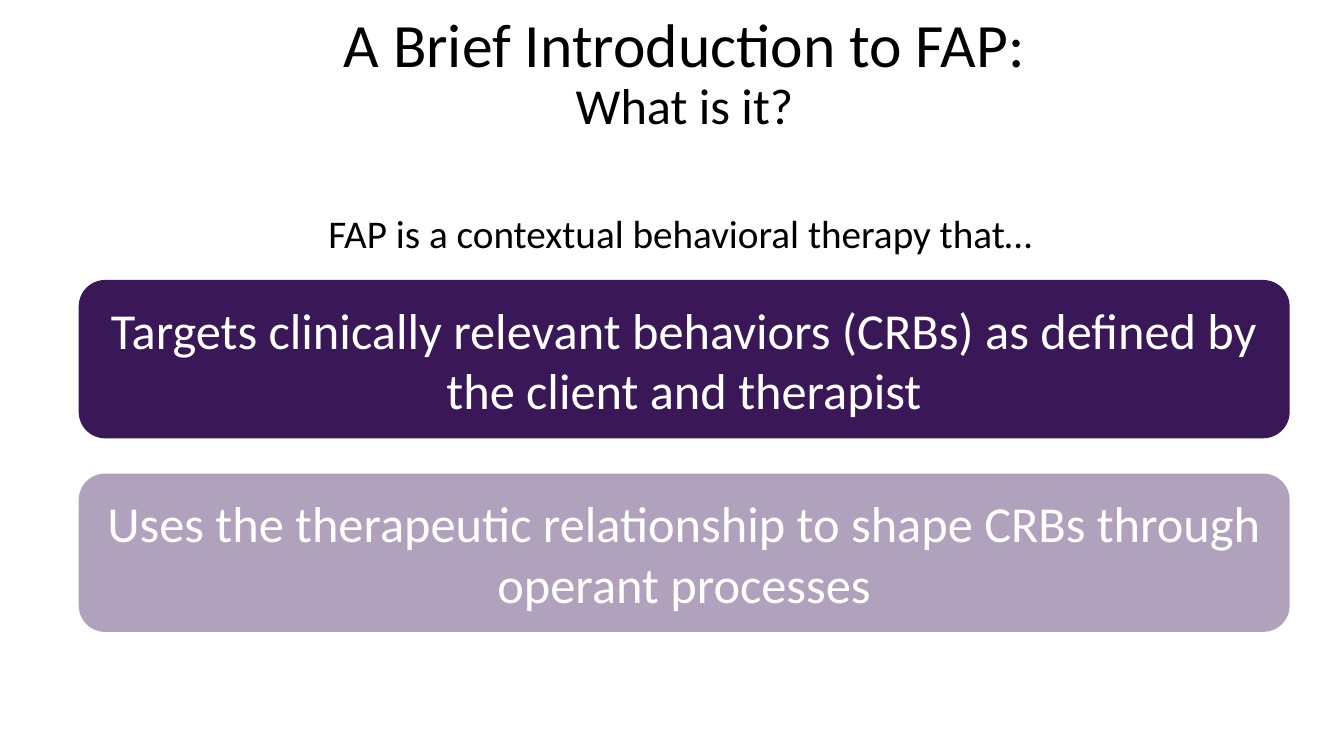
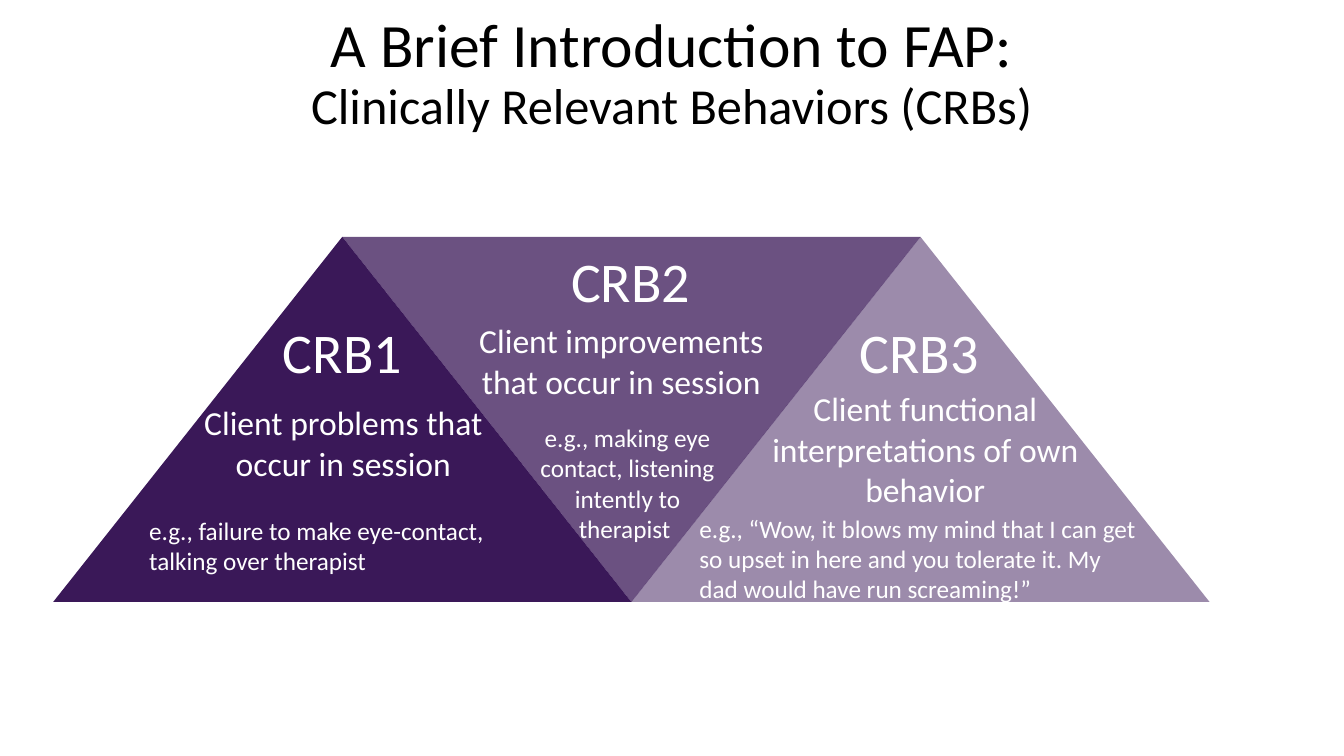
from lxml.etree import SubElement
from pptx import Presentation
from pptx.dml.color import RGBColor
from pptx.enum.shapes import MSO_SHAPE
from pptx.enum.text import MSO_ANCHOR, PP_ALIGN
from pptx.oxml.ns import qn
from pptx.util import Pt

FONT = "Calibri"
PURPLE, WHITE, BLACK = "3A1858", "FFFFFF", "000000"
LEFT, CENTER = PP_ALIGN.LEFT, PP_ALIGN.CENTER


def color(hex_string):
    return RGBColor.from_string(hex_string)


def write(shape, text, size, text_color, align, anchor=MSO_ANCHOR.TOP):
    frame = shape.text_frame
    frame.word_wrap = True
    frame.vertical_anchor = anchor
    para = frame.paragraphs[0]
    para.alignment = align
    para.font.name = FONT
    para.font.size = Pt(size)
    para.font.color.rgb = color(text_color)
    para.add_run().text = text
    return para


def add_text(page, box, text, size, text_color, align=LEFT, anchor=MSO_ANCHOR.TOP):
    shape = page.shapes.add_textbox(*map(Pt, box))
    return write(shape, text, size, text_color, align, anchor)


def add_panel(page, preset, box, opacity):
    """Borderless purple shape; opacity is a percentage."""
    shape = page.shapes.add_shape(preset, *map(Pt, box))
    shape.shadow.inherit = False
    shape.line.fill.background()
    shape.fill.solid()
    shape.fill.fore_color.rgb = color(PURPLE)
    if opacity < 100:
        fill_color = shape.fill._xPr.find(qn("a:solidFill"))[0]
        SubElement(fill_color, qn("a:alpha")).set("val", str(opacity * 1000))
    return shape


def add_title(page, left, subtitle):
    para = add_text(page, (left, 1, 828, 104.4), "A Brief Introduction to FAP:",
                    44, BLACK, CENTER, MSO_ANCHOR.MIDDLE)
    para.line_spacing = 0.9
    para.add_line_break()
    span = para.add_run()
    span.text = subtitle
    span.font.size = Pt(36)


def add_statements(page, box, statements, gap):
    """Stack of equal rounded cards that fills the box."""
    left, top, width, height = box
    card_height = (height - gap * (len(statements) - 1)) / len(statements)
    for index, (text, opacity) in enumerate(statements):
        card_box = (left, top + index * (card_height + gap), width, card_height)
        card = add_panel(page, MSO_SHAPE.ROUNDED_RECTANGLE, card_box, opacity)
        write(card, text, 36, WHITE, CENTER, MSO_ANCHOR.MIDDLE)


def add_triangles(page, box, triangles):
    """Interlocking triangles, every second one upside down, then their texts."""
    left, top, width, height = box
    step = width / (len(triangles) + 1)
    for index, (opacity, _) in enumerate(triangles):
        triangle_box = (left + index * step, top, 2 * step, height)
        triangle = add_panel(page, MSO_SHAPE.FLOWCHART_EXTRACT, triangle_box, opacity)
        triangle.rotation = 180 * (index % 2)
    for index, (_, labels) in enumerate(triangles):
        for (x, y, w, h), text, size, align in labels:
            add_text(page, (left + index * step + x, top + y, w, h),
                     text, size, WHITE, align)


# Text boxes are relative to the top left corner of their triangle
TRIANGLES = [
    (100, [
        ((157, 54, 104.4, 55), "CRB1", 40, LEFT),
        ((96, 114.5, 222.5, 65), "Client problems that occur in session", 24, CENTER),
        ((61.5, 195, 301, 51),
         "e.g., failure to make eye-contact, talking over therapist", 18, LEFT),
    ]),
    (75, [
        ((52, 3.6, 308, 55), "CRB2", 40, CENTER),
        ((88, 56, 222.5, 65), "Client improvements that occur in session", 24, CENTER),
        ((127, 129, 153.4, 94),
         "e.g., making eye contact, listening intently to therapist ", 18, CENTER),
    ]),
    (50, [
        ((156, 54, 104.4, 55), "CRB3", 40, LEFT),
        ((89.7, 104.5, 240.5, 94),
         "Client functional interpretations of own behavior", 24, CENTER),
        ((41.5, 193.7, 332, 73),
         "e.g., “Wow, it blows my mind that I can get so upset in here and you "
         "tolerate it. My dad would have run screaming!”", 18, LEFT),
    ]),
]

STATEMENTS = [
    ("Targets clinically relevant behaviors (CRBs) as defined by the client "
     "and therapist", 100),
    ("Uses the therapeutic relationship to shape CRBs through operant processes", 40),
]


def main():
    deck = Presentation()
    deck.slide_width, deck.slide_height = Pt(960), Pt(540)
    blank = deck.slide_layouts[6]

    # What FAP is
    page = deck.slides.add_slide(blank)
    add_statements(page, (56.2, 200, 865, 251.4), STATEMENTS, gap=25.2)
    add_title(page, 75, "What is it?")
    add_text(page, (227.5, 146.2, 521.3, 41),
             "FAP is a contextual behavioral therapy that…", 28, BLACK)

    # The three kinds of behavior
    page = deck.slides.add_slide(blank)
    add_title(page, 66, "Clinically Relevant Behaviors (CRBs)")
    add_triangles(page, (38, 169.2, 826, 260.8), TRIANGLES)

    deck.save("out.pptx")


if __name__ == "__main__":
    main()
